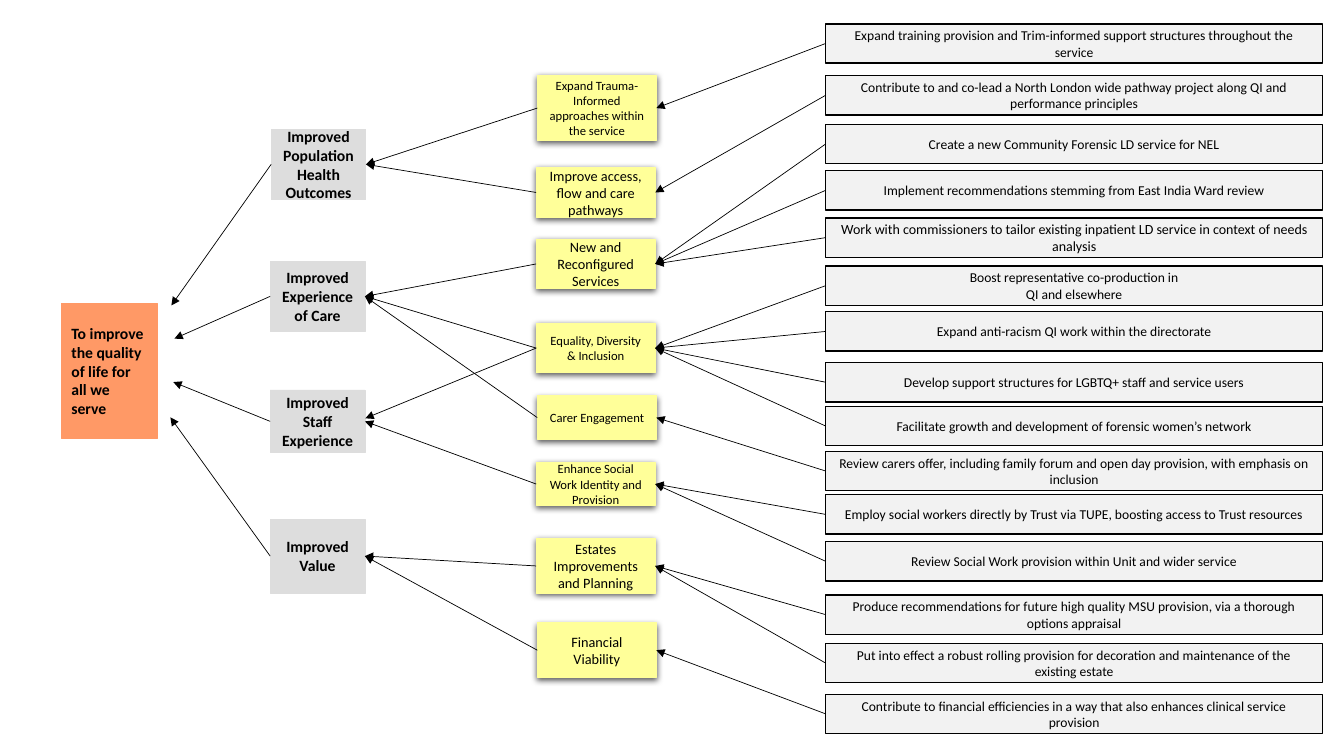
"""Build a driver diagram linking change ideas, drivers, outcomes and the aim."""
import pptx
import pptx.dml.color
import pptx.enum.shapes
import pptx.enum.text
import pptx.oxml
import pptx.oxml.ns
import pptx.util
from lxml import etree

BLACK = pptx.dml.color.RGBColor(0x00, 0x00, 0x00)
ORANGE = pptx.dml.color.RGBColor(0xFF, 0x99, 0x66)
GREY = pptx.dml.color.RGBColor(0xDD, 0xDD, 0xDD)
YELLOW = pptx.dml.color.RGBColor(0xFF, 0xFF, 0x99)
PALE = pptx.dml.color.RGBColor(0xF2, 0xF2, 0xF2)
Pt = pptx.util.Pt
qn = pptx.oxml.ns.qn
LEFT = pptx.enum.text.PP_ALIGN.LEFT
CENTER = pptx.enum.text.PP_ALIGN.CENTER
SHADOW_XML = (
    f'<a:outerShdw {pptx.oxml.ns.nsdecls("a")} blurRad="57150" dist="19050" dir="5400000" '
    'algn="ctr" rotWithShape="0"><a:srgbClr val="000000"><a:alpha val="63000"/></a:srgbClr></a:outerShdw>'
)

presentation = pptx.Presentation()
presentation.slide_width = Pt(960)
presentation.slide_height = Pt(540)
slide = presentation.slides.add_slide(presentation.slide_layouts[6])


def add_box(text, left, top, width, height, fill, line, line_width, size, bold=False, align=CENTER):
    shape = slide.shapes.add_shape(
        pptx.enum.shapes.MSO_SHAPE.RECTANGLE, Pt(left), Pt(top), Pt(width), Pt(height))
    shape.shadow.inherit = False
    shape.fill.solid()
    shape.fill.fore_color.rgb = fill
    shape.line.color.rgb = line
    shape.line.width = Pt(line_width)
    frame = shape.text_frame
    frame.word_wrap = True
    frame.vertical_anchor = pptx.enum.text.MSO_ANCHOR.MIDDLE
    frame.text = text
    for paragraph in frame.paragraphs:
        paragraph.alignment = align
        font = paragraph.runs[0].font
        font.name = "Calibri"
        font.size = Pt(size)
        font.bold = bold
        font.color.rgb = BLACK
    return shape


def add_arrow(source, target=None, end=(0, 0)):
    connector = slide.shapes.add_connector(
        pptx.enum.shapes.MSO_CONNECTOR.STRAIGHT, 0, 0, Pt(end[0]), Pt(end[1]))
    connector.begin_connect(source, 1)
    if target is not None:
        connector.end_connect(target, 3)
    connector.line.color.rgb = BLACK
    connector.line.width = Pt(0.5)
    properties = connector.element.spPr
    etree.SubElement(properties.find(qn("a:ln")), qn("a:tailEnd"), type="triangle")
    etree.SubElement(properties, qn("a:effectLst"))


add_box("To improve the quality of life for all we serve", 43.9, 216.7, 68.4, 96.5,
        ORANGE, ORANGE, 0.5, 11.2, bold=True, align=LEFT)

outcomes = {}
for name, text, left, top, height, arrow_end in [
    ("health", "Improved Population Health Outcomes", 193.7, 92.2, 50.4, (122.4, 218.2)),
    ("care", "Improved Experience of Care", 193, 186.5, 50.4, (124.6, 241.9)),
    ("staff", "Improved Staff Experience", 193, 278.6, 44.8, (123.8, 272.9)),
    ("value", "Improved Value", 193, 370.8, 52.8, (121.7, 298.1)),
]:
    outcomes[name] = add_box(text, left, top, 67.7, height, GREY, GREY, 0.5, 11.2, bold=True)
    add_arrow(outcomes[name], end=arrow_end)

drivers = {}
for name, text, left, top, height, size, outcome in [
    ("trauma", "Expand Trauma-Informed approaches within the service", 383.8, 54, 46.4, 9, "health"),
    ("access", "Improve access, flow and care pathways", 383, 119.5, 36, 10.2, "health"),
    ("services", "New and Reconfigured Services", 383, 170.8, 35.5, 10.2, "care"),
    ("equality", "Equality, Diversity & Inclusion", 383, 230.9, 35.5, 9, "care"),
    ("carers", "Carer Engagement", 383.8, 282.8, 31, 9, "care"),
    ("social", "Enhance Social Work Identity and Provision", 383, 330.5, 30.5, 9, "staff"),
    ("estates", "Estates Improvements and Planning", 383, 384.8, 38.9, 10.2, "value"),
    ("finance", "Financial Viability", 383.8, 445, 38.9, 10.2, "value"),
]:
    driver = add_box(text, left, top, 85, height, YELLOW, YELLOW, 0.75, size)
    effects = driver.element.spPr.find(qn("a:effectLst"))
    effects.append(pptx.oxml.parse_xml(SHADOW_XML))
    add_arrow(driver, outcomes[outcome])
    drivers[name] = driver
add_arrow(drivers["equality"], end=(261, 298.8))

for text, top, size, driver in [
    ("Expand training provision and Trim-informed support structures throughout the service",
     17, 9.7, "trauma"),
    ("Contribute to and co-lead a North London wide pathway project along QI and performance principles",
     54, 9.7, "access"),
    ("Create a new Community Forensic LD service for NEL", 88.8, 9.7, "services"),
    ("Implement recommendations stemming from East India Ward review", 121.9, 9.7, "services"),
    ("Work with commissioners to tailor existing inpatient LD service in context of needs analysis",
     155.7, 10, "services"),
    ("Boost representative co-production in\nQI and elsewhere", 190, 9.7, "equality"),
    ("Expand anti-racism QI work within the directorate", 222.7, 9.7, "equality"),
    ("Develop support structures for LGBTQ+ staff and service users", 259, 9.7, "equality"),
    ("Facilitate growth and development of forensic women’s network", 290.3, 9.7, "equality"),
    ("Review carers offer, including family forum and open day provision, with emphasis on inclusion",
     322.4, 9.7, "carers"),
    ("Employ social workers directly by Trust via TUPE, boosting access to Trust resources",
     353.4, 9.7, "social"),
    ("Review Social Work provision within Unit and wider service", 386.9, 9.7, "social"),
    ("Produce recommendations for future high quality MSU provision, via a thorough options appraisal",
     425, 9.7, "estates"),
    ("Put into effect a robust rolling provision for decoration and maintenance of the existing estate",
     459.6, 9.7, "estates"),
    ("Contribute to financial efficiencies in a way that also enhances clinical service provision",
     495.9, 9.7, "finance"),
]:
    idea = add_box(text, 589.8, top, 355, 28.1, PALE, BLACK, 1, size)
    add_arrow(idea, drivers[driver])

presentation.save("out.pptx")
